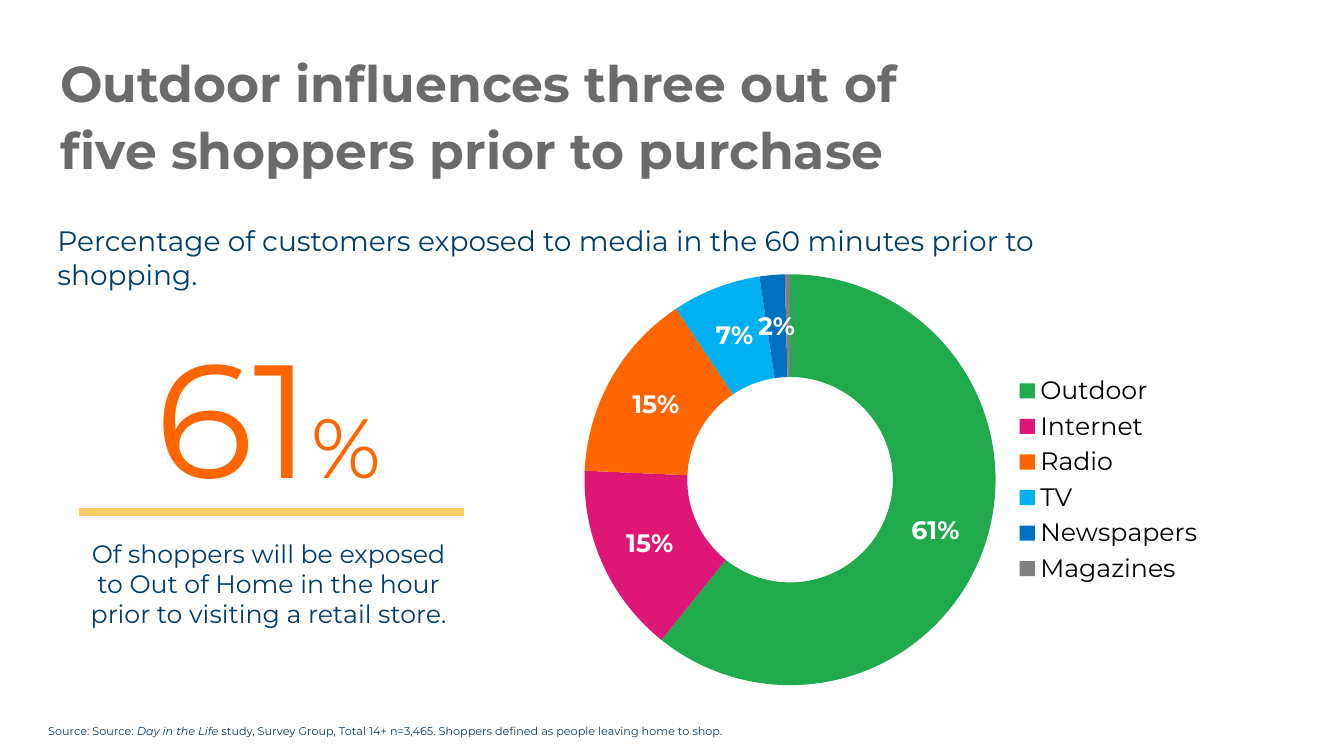
from dataclasses import dataclass

from lxml import etree
from pptx import Presentation
from pptx.chart.data import CategoryChartData
from pptx.dml.color import RGBColor
from pptx.enum.chart import XL_CHART_TYPE, XL_LEGEND_POSITION
from pptx.enum.shapes import MSO_CONNECTOR
from pptx.enum.text import PP_ALIGN
from pptx.oxml import parse_xml
from pptx.oxml.ns import nsdecls, qn
from pptx.slide import Slide
from pptx.util import Inches, Pt

DOUGHNUT = XL_CHART_TYPE.DOUGHNUT
LEGEND_RIGHT = XL_LEGEND_POSITION.RIGHT
STRAIGHT = MSO_CONNECTOR.STRAIGHT
LEFT = PP_ALIGN.LEFT
CENTER = PP_ALIGN.CENTER

FONT = "Montserrat"
GREY = RGBColor(0x6C, 0x6B, 0x6A)
NAVY = RGBColor(0x00, 0x3D, 0x69)
ORANGE = RGBColor(0xFF, 0x66, 0x00)
YELLOW = RGBColor(0xFF, 0xCC, 0x66)
GREEN = RGBColor(0x20, 0xAA, 0x4D)
PINK = RGBColor(0xDE, 0x17, 0x76)
SKY = RGBColor(0x00, 0xB0, 0xF0)
BLUE = RGBColor(0x00, 0x70, 0xC0)
MID_GREY = RGBColor(0x80, 0x80, 0x80)
BLACK = RGBColor(0x00, 0x00, 0x00)
WHITE = RGBColor(0xFF, 0xFF, 0xFF)


@dataclass
class TextPiece:
    text: str
    size: float
    italic: bool = False
    bold: bool = False


@dataclass
class TextBlock:
    left: float
    top: float
    width: float
    height: float
    color: RGBColor
    pieces: list[TextPiece]
    alignment: PP_ALIGN = LEFT
    line_spacing: float = 1.0
    has_margins: bool = True


@dataclass
class Medium:
    name: str
    share: float
    color: RGBColor
    labelled: bool = True


TEXT_BLOCKS = [
    TextBlock(0.6, 0.46, 9.23, 0.6, GREY,
              [TextPiece("Outdoor influences three out of five shoppers prior to purchase",
                         36, bold=True)],
              line_spacing=1.1, has_margins=False),
    TextBlock(0.38, 7.14, 12.72, 0.24, NAVY,
              [TextPiece("Source: Source: ", 8),
               TextPiece("Day in the Life ", 8, italic=True),
               TextPiece("study, Survey Group, Total 14+ n=3,465. "
                         "Shoppers defined as people leaving home to shop.", 8)]),
    TextBlock(0.73, 5.29, 3.87, 1.28, NAVY,
              [TextPiece("Of shoppers will be exposed to Out of Home in the hour "
                         "prior to visiting a retail store.", 18)], CENTER),
    TextBlock(0.73, 3.1, 3.87, 2.04, ORANGE,
              [TextPiece("61", 115), TextPiece("%", 60)], CENTER),
    TextBlock(0.47, 2.17, 11.18, 0.77, NAVY,
              [TextPiece("Percentage of customers exposed to media in the "
                         "60 minutes prior to shopping.", 20)]),
]

MEDIA = [
    Medium("Outdoor", 0.61, GREEN),
    Medium("Internet", 0.15, PINK),
    Medium("Radio", 0.15, ORANGE),
    Medium("TV", 0.07, SKY),
    Medium("Newspapers", 0.02, BLUE),
    Medium("Magazines", 0.004, MID_GREY, labelled=False),
]


def add_text_block(slide: Slide, block: TextBlock) -> None:
    shape = slide.shapes.add_textbox(Inches(block.left), Inches(block.top),
                                     Inches(block.width), Inches(block.height))
    frame = shape.text_frame
    frame.word_wrap = True
    if not block.has_margins:
        frame.margin_left = frame.margin_right = 0
        frame.margin_top = frame.margin_bottom = 0
    paragraph = frame.paragraphs[0]
    paragraph.alignment = block.alignment
    paragraph.line_spacing = block.line_spacing
    for piece in block.pieces:
        run = paragraph.add_run()
        run.text = piece.text
        run.font.name = FONT
        run.font.size = Pt(piece.size)
        run.font.italic = piece.italic
        run.font.bold = piece.bold
        run.font.color.rgb = block.color


def add_divider(slide: Slide) -> None:
    divider = slide.shapes.add_connector(STRAIGHT, Inches(0.78), Inches(5.08),
                                         Inches(4.6), Inches(5.08))
    divider.line.color.rgb = YELLOW
    divider.line.width = Pt(6)
    etree.SubElement(divider._element.spPr, qn("a:effectLst"))


def add_media_chart(slide: Slide, media: list[Medium]) -> None:
    data = CategoryChartData(number_format="0%")
    data.categories = [medium.name for medium in media]
    data.add_series("Series 1", [medium.share for medium in media])
    chart = slide.shapes.add_chart(DOUGHNUT, Inches(5.67), Inches(2.31),
                                   Inches(6.37), Inches(4.9), data).chart
    chart.has_title = False
    chart.font.name = FONT
    chart.font.size = Pt(18)
    chart.font.color.rgb = BLACK
    chart.has_legend = True
    chart.legend.position = LEGEND_RIGHT
    chart.legend.include_in_layout = False

    plot = chart.plots[0]
    plot.vary_by_categories = True
    plot._element.find(qn("c:holeSize")).set("val", "50")
    series = plot.series[0]
    labels = series.data_labels
    labels.show_value = True
    labels.show_percentage = False
    labels.number_format = "0%"
    labels.number_format_is_linked = False
    labels.font.name = FONT
    labels.font.size = Pt(18)
    labels.font.bold = True
    labels.font.color.rgb = WHITE
    for index, medium in enumerate(media):
        fill = series.points[index].format.fill
        fill.solid()
        fill.fore_color.rgb = medium.color
        if not medium.labelled:
            labels._element.insert(0, parse_xml(
                f'<c:dLbl {nsdecls("c")}><c:idx val="{index}"/>'
                '<c:delete val="1"/></c:dLbl>'))

    plot_area = plot._element.getparent()
    for layout in plot_area.findall(qn("c:layout")):
        plot_area.remove(layout)
    plot_area.insert(0, parse_xml(
        f'<c:layout {nsdecls("c")}><c:manualLayout>'
        '<c:layoutTarget val="inner"/><c:xMode val="edge"/><c:yMode val="edge"/>'
        '<c:x val="0.02"/><c:y val="0.08"/><c:w val="0.64"/><c:h val="0.84"/>'
        '</c:manualLayout></c:layout>'))


def main() -> None:
    presentation = Presentation()
    presentation.slide_width = Inches(13.33)
    presentation.slide_height = Inches(7.5)
    slide = presentation.slides.add_slide(presentation.slide_layouts[6])
    for block in TEXT_BLOCKS:
        add_text_block(slide, block)
    add_divider(slide)
    add_media_chart(slide, MEDIA)
    presentation.save("out.pptx")


if __name__ == "__main__":
    main()
